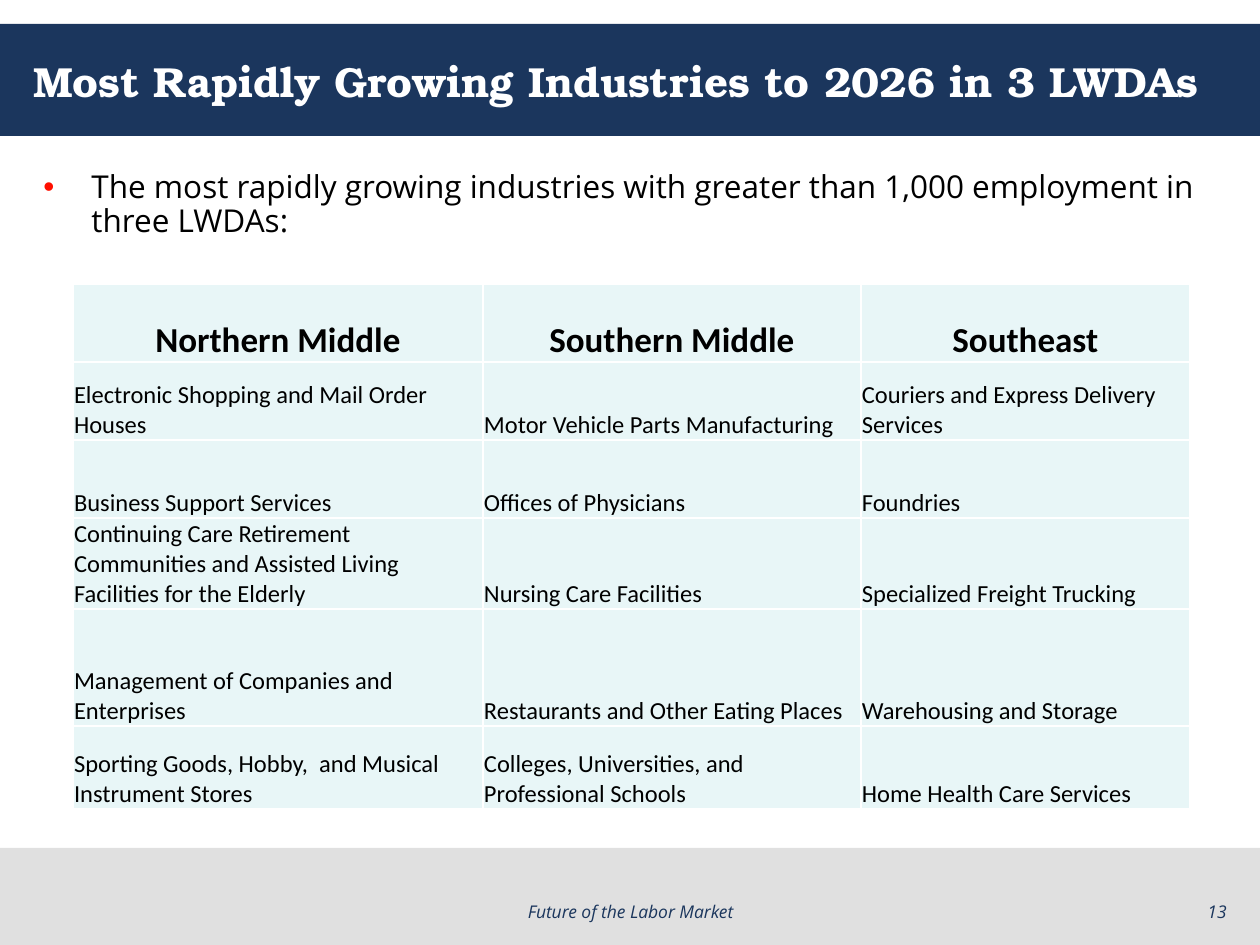
from lxml import etree
from pptx import Presentation
from pptx.dml.color import RGBColor
from pptx.enum.shapes import MSO_SHAPE
from pptx.enum.text import MSO_ANCHOR, PP_ALIGN
from pptx.oxml.ns import qn
from pptx.util import Pt

PX = 914400 // 126
RECT = MSO_SHAPE.RECTANGLE
TOP, MIDDLE, BOTTOM = MSO_ANCHOR.TOP, MSO_ANCHOR.MIDDLE, MSO_ANCHOR.BOTTOM
LEFT, CENTER, RIGHT = PP_ALIGN.LEFT, PP_ALIGN.CENTER, PP_ALIGN.RIGHT

NAVY = RGBColor(0x1B, 0x36, 0x5D)
GRAY = RGBColor(0xE0, 0xE0, 0xE0)
WHITE = RGBColor(0xFF, 0xFF, 0xFF)
BLACK = RGBColor(0x00, 0x00, 0x00)
RED = RGBColor(0xFF, 0x0F, 0x00)
PALE = RGBColor(0xE8, 0xF6, 0xF7)

TITLE = dict(name="TeX Gyre Bonum", size=24, bold=True, color=WHITE)
BODY = dict(name="Open Sans", size=18, color=BLACK)
FOOT = dict(name="Open Sans", size=10, italic=True, color=NAVY)
HEAD = dict(name="Calibri", size=20, bold=True, color=BLACK)
CELL = dict(name="Calibri", size=14, bold=False, color=BLACK)

COLS = [410, 378, 329]
ROWS = [78, 78, 78, 91, 117, 83]
DATA = [
    ["Northern Middle", "Southern Middle", "Southeast"],
    ["Electronic Shopping and Mail Order Houses",
     "Motor Vehicle Parts Manufacturing",
     "Couriers and Express Delivery Services"],
    ["Business Support Services", "Offices of Physicians", "Foundries"],
    ["Continuing Care Retirement Communities and Assisted Living "
     "Facilities for the Elderly",
     "Nursing Care Facilities", "Specialized Freight Trucking"],
    ["Management of Companies and Enterprises",
     "Restaurants and Other Eating Places", "Warehousing and Storage"],
    ["Sporting Goods, Hobby,  and Musical Instrument Stores",
     "Colleges, Universities, and Professional Schools",
     "Home Health Care Services"],
]


def scale(*px):
    return [n * PX for n in px]


def style(font, form):
    for key, val in form.items():
        if key == "color":
            font.color.rgb = val
        else:
            setattr(font, key, Pt(val) if key == "size" else val)


def write(frame, text, form, align):
    para = frame.paragraphs[0]
    run = para.add_run()
    run.text = text
    para.alignment = align
    style(run.font, form)
    return para


def add_band(slide, box, color):
    band = slide.shapes.add_shape(RECT, *scale(*box))
    band.shadow.inherit = False
    band.fill.solid()
    band.fill.fore_color.rgb = color
    band.line.fill.background()


def add_text(slide, box, text, form, align=LEFT, anchor=TOP):
    frame = slide.shapes.add_textbox(*scale(*box)).text_frame
    frame.word_wrap = True
    frame.vertical_anchor = anchor
    return write(frame, text, form, align)


def add_bullet(para, color, indent):
    props = para._p.get_or_add_pPr()
    props.set("marL", str(indent * PX))
    props.set("indent", str(-indent * PX))
    tint = etree.SubElement(props, qn("a:buClr"))
    etree.SubElement(tint, qn("a:srgbClr"), val=str(color))
    etree.SubElement(props, qn("a:buFont"), typeface="Arial")
    etree.SubElement(props, qn("a:buChar"), char="•")


def add_edges(cell, color):
    props = cell._tc.get_or_add_tcPr()
    for side in ("lnL", "lnR", "lnT", "lnB"):
        line = etree.SubElement(props, qn("a:" + side), w=str(Pt(1)))
        fill = etree.SubElement(line, qn("a:solidFill"))
        etree.SubElement(fill, qn("a:srgbClr"), val=str(color))


def fill_cell(cell, text, form, align):
    for side in ("left", "right", "top"):
        setattr(cell, "margin_" + side, PX)
    cell.margin_bottom = 0
    cell.vertical_anchor = BOTTOM
    add_edges(cell, WHITE)
    cell.fill.solid()
    cell.fill.fore_color.rgb = PALE
    write(cell.text_frame, text, form, align)


def add_grid(slide, left, top):
    box = scale(left, top, sum(COLS), sum(ROWS))
    table = slide.shapes.add_table(len(ROWS), len(COLS), *box).table
    for col, width in zip(table.columns, COLS):
        col.width = width * PX
    for row, height in zip(table.rows, ROWS):
        row.height = height * PX
    for r, texts in enumerate(DATA):
        form, align = (CELL, LEFT) if r else (HEAD, CENTER)
        for c, text in enumerate(texts):
            fill_cell(table.cell(r, c), text, form, align)


def main():
    deck = Presentation()
    deck.slide_width, deck.slide_height = scale(1260, 945)
    slide = deck.slides.add_slide(deck.slide_layouts[6])
    add_band(slide, (0, 24, 1260, 112), NAVY)
    add_band(slide, (0, 848, 1260, 97), GRAY)
    add_text(slide, (21, 24, 1218, 113),
             "Most Rapidly Growing Industries to 2026 in 3 LWDAs",
             TITLE, anchor=MIDDLE)
    para = add_text(slide, (31, 165, 1208, 683),
                    "The most rapidly growing industries with greater than "
                    "1,000 employment in three LWDAs:", BODY)
    para.line_spacing = 0.9
    add_bullet(para, RED, 48)
    add_text(slide, (431, 878, 399, 50), "Future of the Labor Market",
             FOOT, CENTER, BOTTOM)
    add_text(slide, (945, 878, 294, 50), "13", FOOT, RIGHT, BOTTOM)
    add_grid(slide, 73, 284)
    deck.save("out.pptx")


if __name__ == "__main__":
    main()
